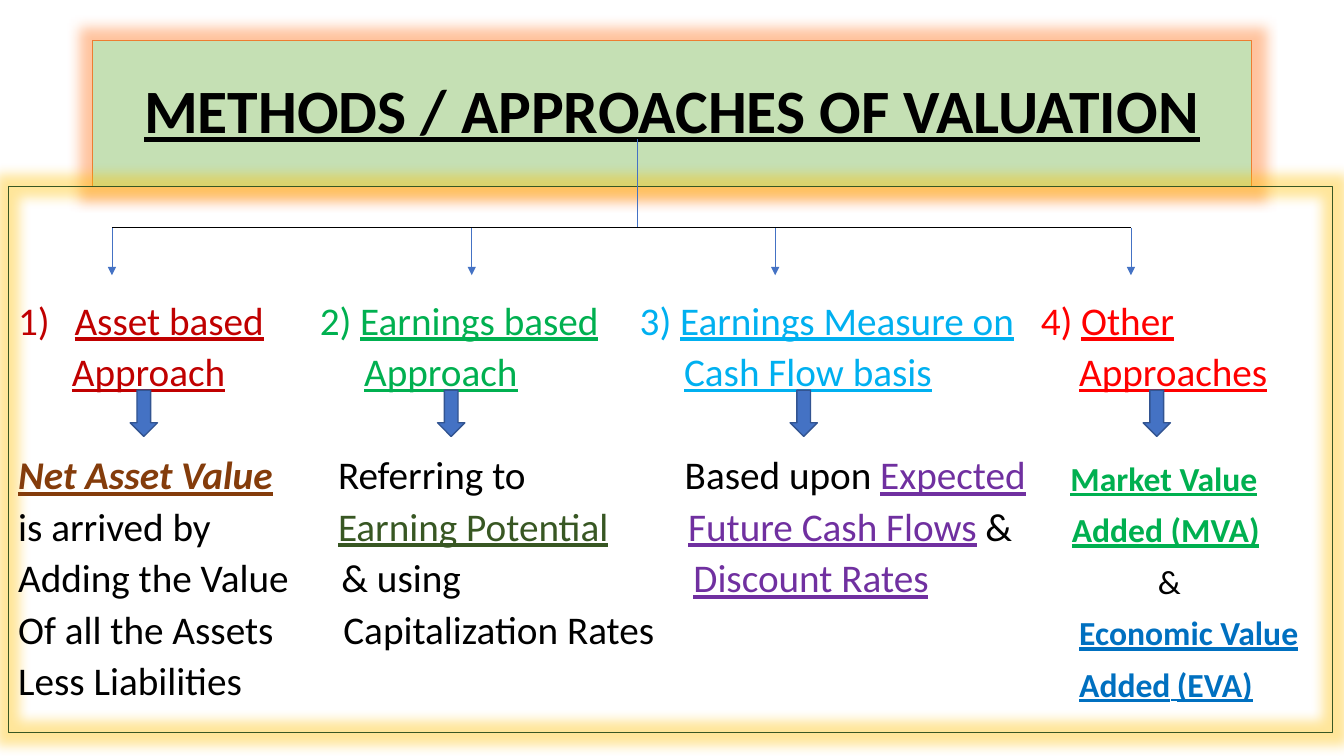
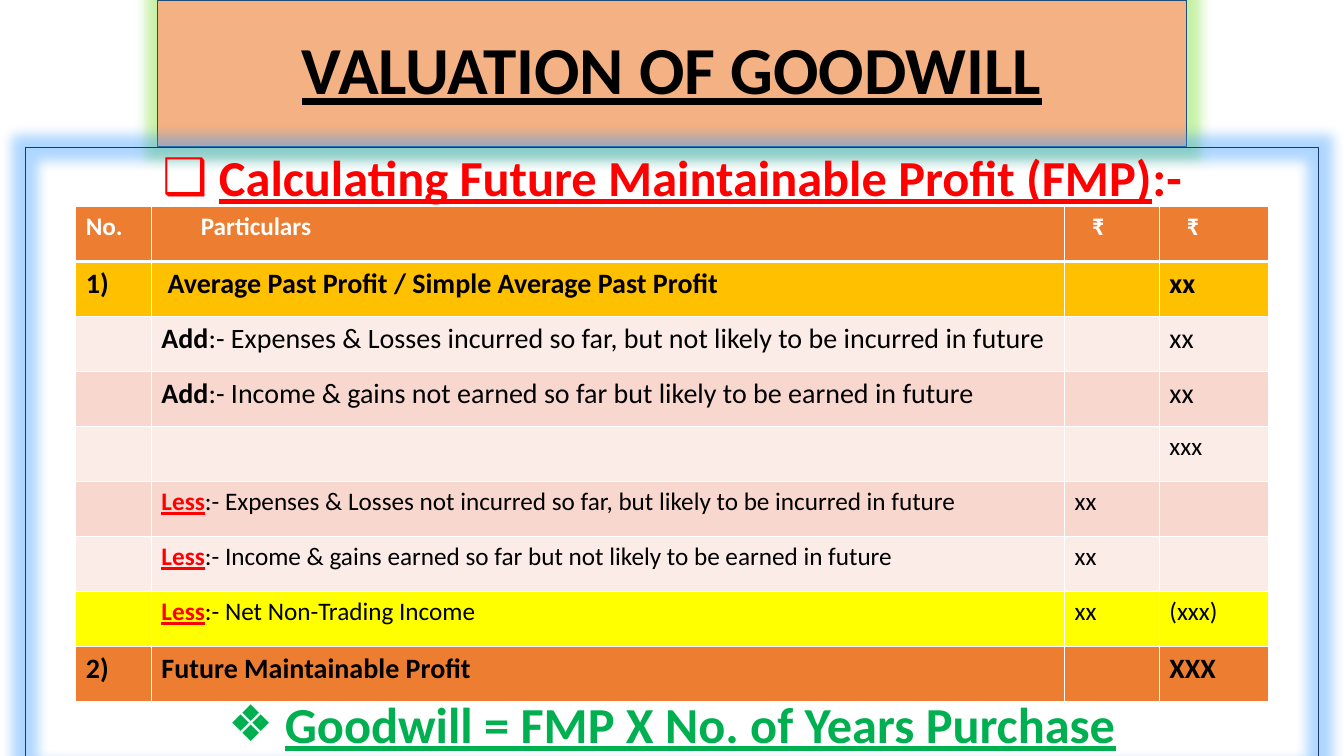
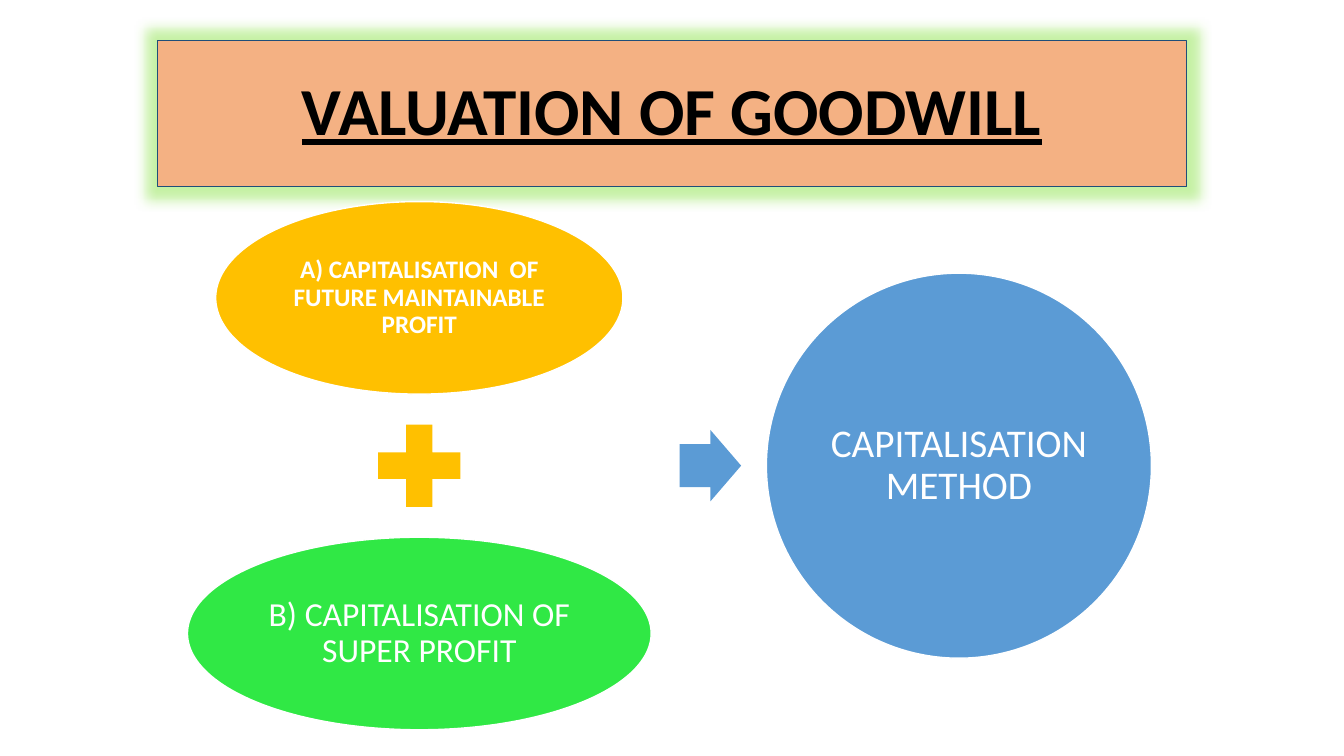
from lxml import etree
from pptx import Presentation
from pptx.dml.color import RGBColor
from pptx.enum.shapes import MSO_CONNECTOR as LINE, MSO_SHAPE as SHAPE
from pptx.enum.text import MSO_ANCHOR as ANCHOR, MSO_AUTO_SIZE as AUTO, PP_ALIGN as ALIGN
from pptx.oxml.ns import qn
from pptx.util import Inches, Pt

WIDTH, HEIGHT = Inches(13.33), Inches(7.5)
FONT = "Calibri"
COLORS = {
    "black": "000000", "white": "FFFFFF", "red": "FF0000", "crimson": "C00000",
    "green": "00B050", "sky": "00B0F0", "blue": "0070C0", "purple": "7030A0",
    "brown": "843C0B", "forest": "385723", "navy": "203864", "steel": "1F4E79",
    "mint": "C5E0B4", "peach": "F4B183", "orange": "ED7D31", "gold": "FFC000",
    "yellow": "FFFF00", "pale": "FCECE8", "rose": "F8D7CE", "lime": "30E845",
    "arrow": "4472C4", "arrow_edge": "325491", "azure": "5B9BD5",
    "glow_orange": "FF6B0F", "glow_gold": "FFC000",
    "glow_green": "70DC1E", "glow_blue": "3399FF",
}


# Lengths are percentages of the slide's width and height
def across(share):
    return int(WIDTH * share / 100)


def down(share):
    return int(HEIGHT * share / 100)


def centred(width):
    return (100 - width) / 2


def place(shape, left, top, width, height):
    shape.left, shape.top = across(left), down(top)
    shape.width, shape.height = across(width), down(height)


# Colour, line and effect
def color(name):
    return RGBColor.from_string(COLORS[name])


def paint(shape, fill=None, line=None, points=0.75):
    if fill:
        shape.fill.solid()
        shape.fill.fore_color.rgb = color(fill)
    else:
        shape.fill.background()
    if line:
        shape.line.color.rgb = color(line)
        shape.line.width = Pt(points)
    else:
        shape.line.fill.background()


def add_glow(shape, name):
    effects = etree.SubElement(shape._element.spPr, qn("a:effectLst"))
    glow = etree.SubElement(effects, qn("a:glow"), rad=str(Pt(18)))
    tint = etree.SubElement(glow, qn("a:srgbClr"), val=COLORS[name])
    etree.SubElement(tint, qn("a:alpha"), val="40000")


# Text
def set_font(font, size=None, name=None, style=None):
    if size:
        font.size = Pt(size)
    if name:
        font.color.rgb = color(name)
    if style is not None:
        font.bold, font.italic, font.underline = (mark in style for mark in "biu")


def format_para(para, size, name="black", style="", align=ALIGN.LEFT, spacing=None):
    para.alignment = align
    if spacing:
        para.line_spacing = spacing
    para.font.name = FONT
    set_font(para.font, size, name, style)


def add_spans(para, spans):
    """Each span is (text, colour, style, size); all but the text may be left out."""
    for text, *look in spans:
        span = para.add_run()
        span.text = text
        name, style, size = (look + [None] * 3)[:3]
        set_font(span.font, size, name, style)


def set_list(para, margin=0, hanging=0, bullet=None, number=None, name=None):
    props = para._p.get_or_add_pPr()
    props.set("marL", str(margin))
    props.set("indent", str(-hanging))
    if number:
        tint = etree.SubElement(props, qn("a:buClr"))
        etree.SubElement(tint, qn("a:srgbClr"), val=COLORS[name])
        etree.SubElement(props, qn("a:buFont"), typeface=FONT)
        etree.SubElement(props, qn("a:buAutoNum"), type="arabicParenR", startAt=str(number))
    elif bullet:
        etree.SubElement(props, qn("a:buChar"), char=bullet)
    else:
        etree.SubElement(props, qn("a:buNone"))


def next_para(frame, index):
    return frame.add_paragraph() if index else frame.paragraphs[0]


# Elements
def add_title(page, text, size, width, top, fill, line, glow):
    title = page.shapes.title
    place(title, centred(width), top, width, 19.33)
    paint(title, fill, line)
    add_glow(title, glow)
    frame = title.text_frame
    frame.auto_size, frame.vertical_anchor = AUTO.NONE, ANCHOR.MIDDLE
    frame.text = text
    format_para(frame.paragraphs[0], size, "black", "bu", ALIGN.CENTER, 0.9)


def add_goodwill_title(page, top):
    add_title(page, "VALUATION OF GOODWILL", 48, 76.6, top, "peach", "steel", "glow_green")


def frame_body(page, left, top, width, height, line, glow):
    body = page.placeholders[1]
    place(body, left, top, width, height)
    paint(body, None, line)
    add_glow(body, glow)
    frame = body.text_frame
    frame.auto_size, frame.vertical_anchor = AUTO.NONE, ANCHOR.TOP
    frame.word_wrap = True
    return frame


def fill_approach(frame, number, name, hanging, heading, details):
    """A numbered heading of two lines, then details as (indent, spans)."""
    first, second, second_indent = heading
    rows = [(hanging, [(first, name, "u")]), (second_indent, [(second, name, "u")])]
    for index, (indent, spans) in enumerate(rows + details):
        para = next_para(frame, index)
        if index:
            set_list(para, across(indent))
        else:
            set_list(para, across(indent), across(indent), number=number, name=name)
        format_para(para, 28, spacing=Pt(26.8))
        para.space_before = Pt({0: 0, 2: 47}.get(index, 10))
        add_spans(para, spans)


def add_line(page, start, end, name, arrow=False):
    line = page.shapes.add_connector(
        LINE.STRAIGHT, across(start[0]), down(start[1]), across(end[0]), down(end[1]))
    line.line.color.rgb = color(name)
    line.line.width = Pt(0.5)
    if arrow:
        etree.SubElement(line.line._get_or_add_ln(), qn("a:tailEnd"), type="triangle")
    etree.SubElement(line._element.spPr, qn("a:effectLst"))


def add_figure(page, kind, centre, size, fill, line=None):
    (x, y), (width, height) = centre, size
    figure = page.shapes.add_shape(kind, 0, 0, 0, 0)
    place(figure, x - width / 2, y - height / 2, width, height)
    figure.shadow.inherit = False
    paint(figure, fill, line, 1)
    return figure


def add_oval(page, centre, size, fill, text, points, style=""):
    oval = add_figure(page, SHAPE.OVAL, centre, size, fill, "white")
    frame = oval.text_frame
    frame.word_wrap, frame.vertical_anchor = True, ANCHOR.MIDDLE
    frame.margin_left = frame.margin_right = Inches(0.03)
    frame.margin_top = frame.margin_bottom = Inches(0.03)
    frame.text = text
    format_para(frame.paragraphs[0], points, "white", style, ALIGN.CENTER, 0.9)


def set_borders(cell, bottom):
    props = cell._tc.get_or_add_tcPr()
    for index, (side, points) in enumerate(
            (("lnL", 1), ("lnR", 1), ("lnT", 1), ("lnB", bottom))):
        edge = etree.Element(qn("a:" + side), w=str(Pt(points)))
        fill = etree.SubElement(edge, qn("a:solidFill"))
        etree.SubElement(fill, qn("a:srgbClr"), val=COLORS["white"])
        props.insert(index, edge)


def add_table(page, top, columns, row_height, rows):
    """Each row is (fill, size, text colour, style, cells)."""
    width = sum(columns)
    table = page.shapes.add_table(
        len(rows), len(columns), across(centred(width)), down(top),
        across(width), down(row_height * len(rows))).table
    for column, share in zip(table.columns, columns):
        column.width = across(share)
    for r, (fill, size, name, style, cells) in enumerate(rows):
        table.rows[r].height = down(row_height)
        for c, content in enumerate(cells):
            cell = table.cell(r, c)
            set_borders(cell, 1 if r else 3)
            cell.fill.solid()
            cell.fill.fore_color.rgb = color(fill)
            para = cell.text_frame.paragraphs[0]
            format_para(para, size, name, style)
            if content:
                add_spans(para, [(content,)] if isinstance(content, str) else content)
    return table


# Slides
def build_methods(deck):
    page = deck.slides.add_slide(deck.slide_layouts[1])
    add_title(page, "METHODS / APPROACHES OF VALUATION", 44, 86.25, 5.33,
              "mint", "orange", "glow_orange")
    top, height = 24.67, 72.27
    body = frame_body(page, 0.6, top, 98.55, height, "forest", "glow_gold")

    # Left and width, then colour, hanging indent, heading and details
    approaches = [
        (None, None, "crimson", 4.2, ("Asset based", "Approach", 4), [
            (0, [("Net Asset Value", "brown", "biu")]),
            (0, [("is arrived by",)]),
            (0, [("Adding the Value",)]),
            (0, [("Of all the Assets",)]),
            (0, [("Less Liabilities",)])]),
        (23.8, 26, "green", 3, ("Earnings based", "Approach", 3.3), [
            (1.35, [("Referring to",)]),
            (1.35, [("Earning Potential", "forest", "u")]),
            (1.6, [("& using",)]),
            (1.75, [("Capitalization Rates",)])]),
        (47.6, 29.5, "sky", 3, ("Earnings Measure on", "Cash Flow basis", 3.3), [
            (3.35, [("Based upon ",), ("Expected", "purple", "u")]),
            (3.6, [("Future Cash Flows", "purple", "u"), (" &",)]),
            (4, [("Discount Rates", "purple", "u")])]),
        (77.45, 21.5, "red", 3, ("Other", "Approaches", 2.85), [
            (2.2, [("Market Value", "green", "bu", 24)]),
            (2.3, [("Added (MVA)", "green", "bu", 24)]),
            (8.7, [("&", "black", "", 24)]),
            (2.85, [("Economic Value", "blue", "bu", 24)]),
            (2.85, [("Added", "blue", "bu", 24), (" ", "blue", "bu", 20),
                    ("(EVA)", "blue", "bu", 24)])]),
    ]
    for number, (left, width, *content) in enumerate(approaches, 1):
        frame = body
        if left:
            box = page.shapes.add_textbox(across(left), down(top), across(width), down(height))
            frame = box.text_frame
            frame.word_wrap = True
            frame.margin_left = frame.margin_right = 0
        frame.margin_top = Inches(1.18)
        fill_approach(frame, number, *content)

    # Branches from the title to the four approaches
    branches = (8.33, 35.1, 57.68, 84.15)
    fork = 30.13
    add_line(page, (47.4, 18.4), (47.4, fork), "arrow")
    add_line(page, (branches[0], fork), (branches[-1], fork), "black")
    for x in branches:
        add_line(page, (x, fork), (x, 36.4), "arrow", arrow=True)
    for x in (10.7, 33.57, 59.8, 86.07):
        add_figure(page, SHAPE.DOWN_ARROW, (x, 54.67), (2.03, 6.13), "arrow", "arrow_edge")


def build_profit(deck):
    page = deck.slides.add_slide(deck.slide_layouts[1])
    add_goodwill_title(page, 0)
    body = frame_body(page, 1.88, 19.55, 96.25, 82.53, "navy", "glow_blue")
    lines = (
        ("❑", "red", 0, [(" ",), ("Calculating Future Maintainable Profit (FMP)", None, "bu"),
                         (":-",)]),
        ("❖", "green", 352, [(" ",), ("Goodwill = FMP X No. of Years Purchase", None, "bu")]),
    )
    for index, (bullet, name, before, spans) in enumerate(lines):
        para = next_para(body, index)
        set_list(para, Inches(0.25), Inches(0.25), bullet)
        format_para(para, 36, name, "b", ALIGN.CENTER, 0.9)
        para.space_before = Pt(before)
        add_spans(para, spans)

    def entry(label, text):
        look = ("red", "bu") if label == "Less" else ("black", "b")
        return [(label, *look), (":- " + text,)]

    table = add_table(page, 27.33, (5.63, 67.95, 7.05, 8.1), 7.28, [
        ("orange", 18, "white", "b", ("No.", "Particulars", "₹", "₹")),
        ("gold", 20, "black", "b",
         ("1)", "Average Past Profit / Simple Average Past Profit", "", "xx")),
        ("pale", 20, "black", "", ("", entry(
            "Add", "Expenses & Losses incurred so far, but not likely to be incurred in future"),
            "", "xx")),
        ("rose", 20, "black", "", ("", entry(
            "Add", "Income & gains not earned so far but likely to be earned in future"),
            "", "xx")),
        ("pale", 18, "black", "", ("", "", "", "xxx")),
        ("rose", 18, "black", "", ("", entry(
            "Less", "Expenses & Losses not incurred so far, but likely to be incurred in future"),
            "xx", "")),
        ("pale", 18, "black", "", ("", entry(
            "Less", "Income & gains earned so far but not likely to be earned in future"),
            "xx", "")),
        ("yellow", 18, "black", "", ("", entry("Less", "Net Non-Trading Income"),
                                     "xx", "(xxx)")),
        ("orange", 20, "black", "b", ("2)", "Future Maintainable Profit", "", "XXX")),
    ])
    for row, column, indent in ((0, 1, 0.49), (0, 2, 0.27), (0, 3, 0.27), (1, 1, 0.16)):
        table.cell(row, column).margin_left = Inches(indent)


def build_capitalisation(deck):
    page = deck.slides.add_slide(deck.slide_layouts[5])
    add_goodwill_title(page, 5.33)
    x, y, step = 31.2, 61.6, 22.2
    add_oval(page, (x, y - step), (30.3, 25.47), "gold",
             "A) CAPITALISATION  OF FUTURE MAINTAINABLE PROFIT", 18, "b")
    add_figure(page, SHAPE.MATH_PLUS, (x, y), (8.33, 14.8), "gold")
    add_oval(page, (x, y + step), (34.5, 25.47), "lime",
             "B) CAPITALISATION OF SUPER PROFIT", 24)
    arrow = add_figure(page, SHAPE.RIGHT_ARROW, (52.85, y), (4.58, 9.47), "azure")
    arrow.adjustments[0] = 0.6
    add_oval(page, (71.35, y), (28.65, 50.93), "azure", "CAPITALISATION METHOD", 28)


def main():
    deck = Presentation()
    deck.slide_width, deck.slide_height = WIDTH, HEIGHT
    build_methods(deck)
    build_profit(deck)
    build_capitalisation(deck)
    deck.save("out.pptx")


if __name__ == "__main__":
    main()
